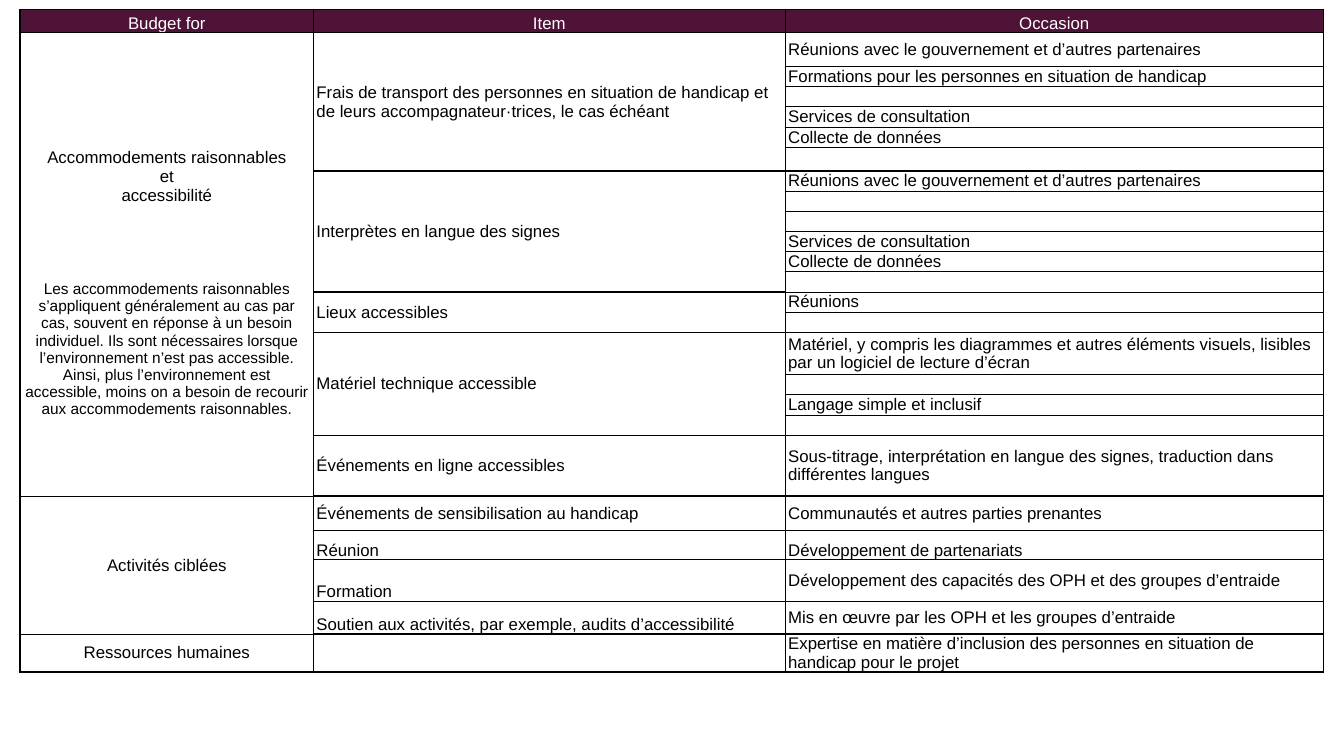
import pptx
import pptx.util
import pptx.dml.color
import pptx.enum.text
from lxml import etree
from pptx.oxml.ns import qn

Color = pptx.dml.color.RGBColor
Anchor = pptx.enum.text.MSO_ANCHOR
Align = pptx.enum.text.PP_ALIGN

WINE = Color(0x4F, 0x13, 0x37)
WHITE = Color(255, 255, 255)
BLACK = Color(0, 0, 0)

WIDE, HIGH = pptx.util.Inches(26.67), pptx.util.Inches(15)

# Column widths and row heights, in percent of the slide
COLS = [21.82, 35.1, 40.04]
LINE = 2.67
ROWS = ([3.07, 4.47] + [LINE] * 4 + [3.13] + [LINE] * 8 + [5.6] + [LINE] * 3
        + [8.07, 4.47, 3.93, 5.47, 4.4, 4.2])

# Row edges drawn thick, right of the first column
THICK = {7, 20, 24}
# Cells (row, column) whose text sits at the bottom
LOW = {(21, 1), (21, 2), (22, 1), (23, 1)}

MEET = "Réunions avec le gouvernement et d’autres partenaires"
ADVICE = "Services de consultation"
DATA = "Collecte de données"
NEEDS = ["Accommodements raisonnables", "et", "accessibilité"]
NOTE = ("Les accommodements raisonnables s’appliquent généralement au cas par cas, "
        "souvent en réponse à un besoin individuel. Ils sont nécessaires lorsque "
        "l’environnement n’est pas accessible. Ainsi, plus l’environnement est "
        "accessible, moins on a besoin de recourir aux accommodements raisonnables.")

# Text and row span, column by column
BUDGET = [("Budget for", 1), ("", 19), ("Activités ciblées", 4),
          ("Ressources humaines", 1)]
ITEM = [
    ("Item", 1),
    ("Frais de transport des personnes en situation de handicap et de leurs "
     "accompagnateur·trices, le cas échéant", 6),
    ("Interprètes en langue des signes", 6),
    ("Lieux accessibles", 2),
    ("Matériel technique accessible", 4),
    ("Événements en ligne accessibles", 1),
    ("Événements de sensibilisation au handicap", 1),
    ("Réunion", 1),
    ("Formation", 1),
    ("Soutien aux activités, par exemple, audits d’accessibilité", 1),
    ("", 1),
]
OCCASION = [(text, 1) for text in [
    "Occasion",
    MEET, "Formations pour les personnes en situation de handicap", "",
    ADVICE, DATA, "",
    MEET, "", "", ADVICE, DATA, "",
    "Réunions", "",
    "Matériel, y compris les diagrammes et autres éléments visuels, lisibles "
    "par un logiciel de lecture d’écran", "",
    "Langage simple et inclusif", "",
    "Sous-titrage, interprétation en langue des signes, traduction dans "
    "différentes langues",
    "Communautés et autres parties prenantes",
    "Développement de partenariats",
    "Développement des capacités des OPH et des groupes d’entraide",
    "Mis en œuvre par les OPH et les groupes d’entraide",
    "Expertise en matière d’inclusion des personnes en situation de handicap "
    "pour le projet",
]]


def across(share):
    return round(WIDE * share / 100)


def down(share):
    return round(HIGH * share / 100)


def write(para, text, size=24, color=BLACK, align=Align.LEFT, gap=0):
    para.alignment = align
    if gap:
        para.space_before = pptx.util.Pt(gap)
    run = para.add_run()
    run.text = text
    run.font.name = "Arial"
    run.font.size = pptx.util.Pt(size)
    run.font.color.rgb = color


def edge(cell, side, width):
    line = etree.SubElement(cell._tc.get_or_add_tcPr(), qn("a:" + side),
                            w=str(pptx.util.Pt(width)))
    fill = etree.SubElement(line, qn("a:solidFill"))
    etree.SubElement(fill, qn("a:srgbClr"), val=str(BLACK))


def level(row, col):
    """Width of the line above the given row."""
    if row in (0, len(ROWS)):
        return 2.25
    return 3 if row in THICK and col else 1.5


def frame(cell, row, col, first, last):
    edge(cell, "lnL", 1.5 if col else 2.25)
    edge(cell, "lnR", 2.25 if col == len(COLS) - 1 else 1.5)
    if row == first:
        edge(cell, "lnT", level(row, col))
    if row == last:
        edge(cell, "lnB", level(row + 1, col))


def style(cell, row, col):
    head = row == 0
    cell.margin_left = cell.margin_right = pptx.util.Inches(0.06)
    cell.margin_top = cell.margin_bottom = 0
    low = head or (row, col) in LOW
    cell.vertical_anchor = Anchor.BOTTOM if low else Anchor.MIDDLE
    if head:
        cell.fill.solid()
        cell.fill.fore_color.rgb = WINE
    else:
        cell.fill.background()


def column(table, col, cells):
    row = 0
    for text, span in cells:
        last = row + span - 1
        for part in range(row, last + 1):
            frame(table.cell(part, col), part, col, row, last)
            style(table.cell(part, col), row, col)
        cell = table.cell(row, col)
        if span > 1:
            cell.merge(table.cell(last, col))
        if text:
            mid = row == 0 or col == 0
            write(cell.text_frame.paragraphs[0], text,
                  color=WHITE if row == 0 else BLACK,
                  align=Align.CENTER if mid else Align.LEFT)
        row += span


def needs(cell):
    """Heading lines and, further down, the smaller note."""
    cell.margin_top = down(5)
    body = cell.text_frame
    for num, text in enumerate(NEEDS):
        para = body.add_paragraph() if num else body.paragraphs[0]
        write(para, text, align=Align.CENTER)
    write(body.add_paragraph(), NOTE, size=22, align=Align.CENTER, gap=108)


def main():
    deck = pptx.Presentation()
    deck.slide_width, deck.slide_height = WIDE, HIGH
    slide = deck.slides.add_slide(deck.slide_layouts[6])

    # Empty grid
    table = slide.shapes.add_table(
        len(ROWS), len(COLS), across(1.5), down(1.27),
        across(sum(COLS)), down(sum(ROWS))).table
    table.first_row = table.horz_banding = False
    for col, share in zip(table.columns, COLS):
        col.width = across(share)
    for row, share in zip(table.rows, ROWS):
        row.height = down(share)

    # Contents
    for num, cells in enumerate([BUDGET, ITEM, OCCASION]):
        column(table, num, cells)
    needs(table.cell(1, 0))

    deck.save("out.pptx")


if __name__ == "__main__":
    main()
